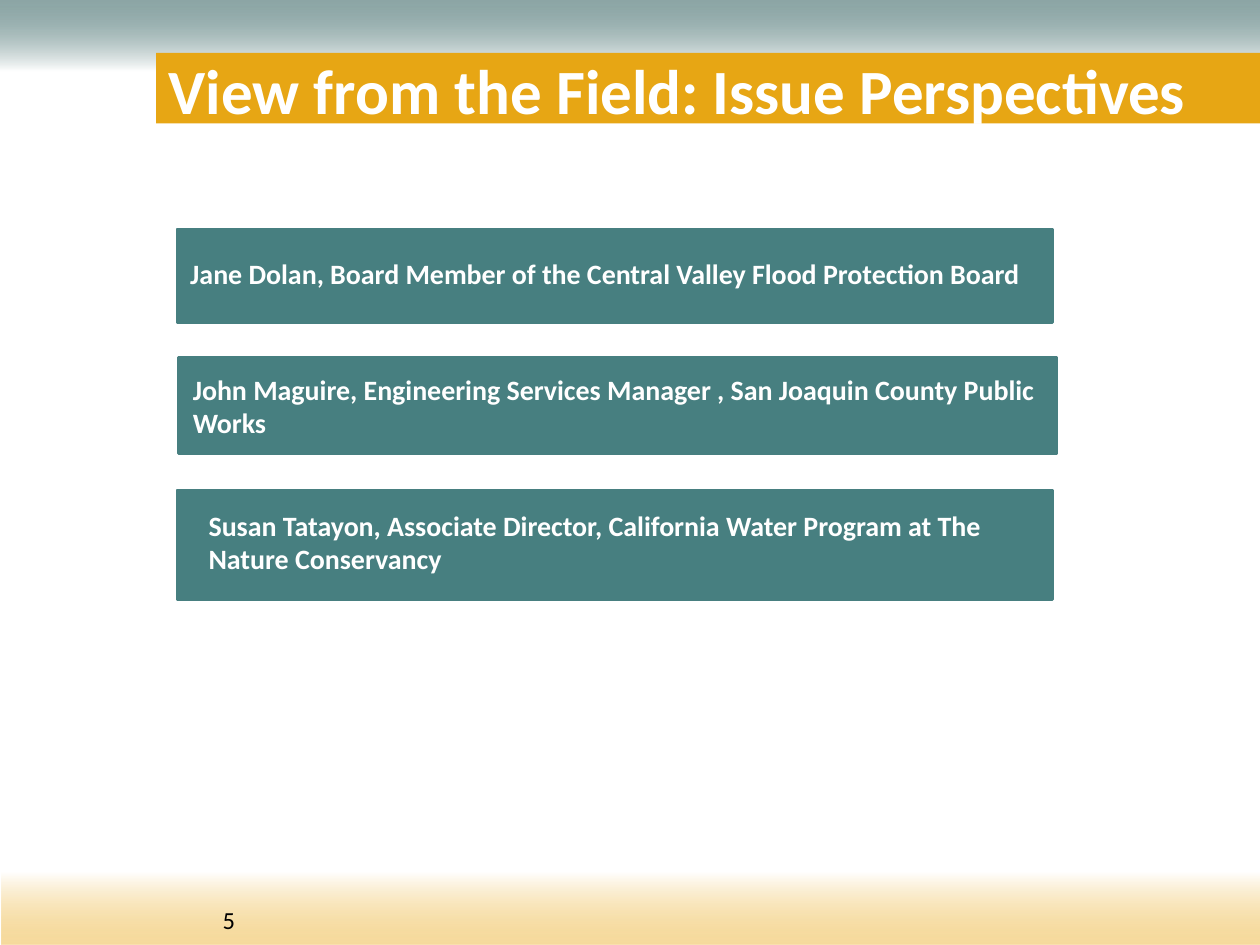
from dataclasses import dataclass

from lxml.etree import SubElement
from pptx import Presentation
from pptx.dml.color import RGBColor
from pptx.enum.shapes import MSO_SHAPE
from pptx.enum.text import MSO_ANCHOR
from pptx.oxml.ns import qn
from pptx.util import Pt


@dataclass(frozen=True)
class Theme:
    font: str = "Calibri"
    teal: str = "477F80"
    deep_teal: str = "215352"
    gold: str = "E7A614"
    light_gold: str = "EEB840"
    white: str = "FFFFFF"
    black: str = "000000"
    title_size: int = 36
    speaker_size: int = 16
    number_size: int = 14


THEME = Theme()

# Each speaker: text, card (left, top, width, height), format of the text frame, line spacing
SPEAKERS = [
    ("Jane Dolan, Board Member of the Central Valley Flood Protection Board",
     (101.2, 131, 500.4, 53.3), {"margin_left": Pt(7.5)}, 0.9),
    ("John Maguire, Engineering Services Manager , San Joaquin County Public Works",
     (102.2, 204.5, 501.8, 54.7), {"margin_left": Pt(8)}, 1.0),
    ("Susan Tatayon, Associate Director, California Water Program at The Nature Conservancy",
     (101.2, 280.1, 500.4, 62.6), {"margin_left": Pt(18), "margin_bottom": Pt(8)}, 1.0),
]


def apply_format(target, values):
    for name, value in values.items():
        setattr(target, name, value)


def add_rectangle(page, box):
    shape = page.shapes.add_shape(MSO_SHAPE.RECTANGLE, *map(Pt, box))
    shape.shadow.inherit = False
    shape.line.fill.background()
    return shape


def fill_solid(shape, color):
    shape.fill.solid()
    shape.fill.fore_color.rgb = RGBColor.from_string(color)


def write_text(frame, text, size, color, bold=False, line_spacing=None, **frame_format):
    apply_format(frame, {"word_wrap": True, **frame_format})
    para = frame.paragraphs[0]
    if line_spacing:
        para.line_spacing = line_spacing
    para.alignment = 1
    span = para.add_run()
    span.text = text
    apply_format(span.font, {"name": THEME.font, "size": Pt(size), "bold": bold})
    span.font.color.rgb = RGBColor.from_string(color)


def add_fading_band(page, box, color, angle):
    """Half-transparent colour that fades to white at the middle of the band."""
    band = add_rectangle(page, box)
    band.fill.gradient()
    band.fill.gradient_angle = angle
    stops = band.fill.gradient_stops
    for stop, position, shade in zip(stops, (0, 0.52), (color, THEME.white)):
        stop.position = position
        stop.color.rgb = RGBColor.from_string(shade)
    first_color = next(band.element.iter(qn("a:srgbClr")))
    SubElement(first_color, qn("a:alpha"), val="51000")


def add_title(page, box):
    left, top, width, height = box
    fill_solid(add_rectangle(page, (left, top, width, height - 1.5)), THEME.gold)
    title = page.shapes.add_textbox(*map(Pt, box))
    write_text(title.text_frame, "View from the Field: Issue Perspectives",
               THEME.title_size, THEME.white, bold=True,
               vertical_anchor=MSO_ANCHOR.MIDDLE)


def add_speaker_card(page, box, text, frame_format, line_spacing):
    card = add_rectangle(page, box)
    fill_solid(card, THEME.teal)
    card.line.color.rgb = RGBColor.from_string(THEME.teal)
    card.line.width = Pt(1.5)
    margins = {"margin_right": Pt(8), "margin_top": Pt(4.5), "margin_bottom": Pt(4.5)}
    write_text(card.text_frame, text, THEME.speaker_size, THEME.white, bold=True,
               line_spacing=line_spacing, vertical_anchor=MSO_ANCHOR.MIDDLE,
               **{**margins, **frame_format})


def add_page_number(page, box, number):
    label = page.shapes.add_textbox(*map(Pt, box))
    write_text(label.text_frame, number, THEME.number_size, THEME.black)


def main():
    deck = Presentation()
    apply_format(deck, {"slide_width": Pt(720), "slide_height": Pt(540)})
    page = deck.slides.add_slide(deck.slide_layouts[6])

    # Background bands
    add_fading_band(page, (-0.7, 0, 722, 78.5), THEME.deep_teal, 270)
    add_fading_band(page, (0.7, 460, 719.3, 80), THEME.light_gold, 90)

    # Title, speakers and page number
    add_title(page, (89.3, 30.2, 631, 41.8))
    for text, box, frame_format, line_spacing in SPEAKERS:
        add_speaker_card(page, box, text, frame_format, line_spacing)
    add_page_number(page, (120.2, 513.4, 61.2, 24.5), "5")

    deck.save("out.pptx")


if __name__ == "__main__":
    main()
